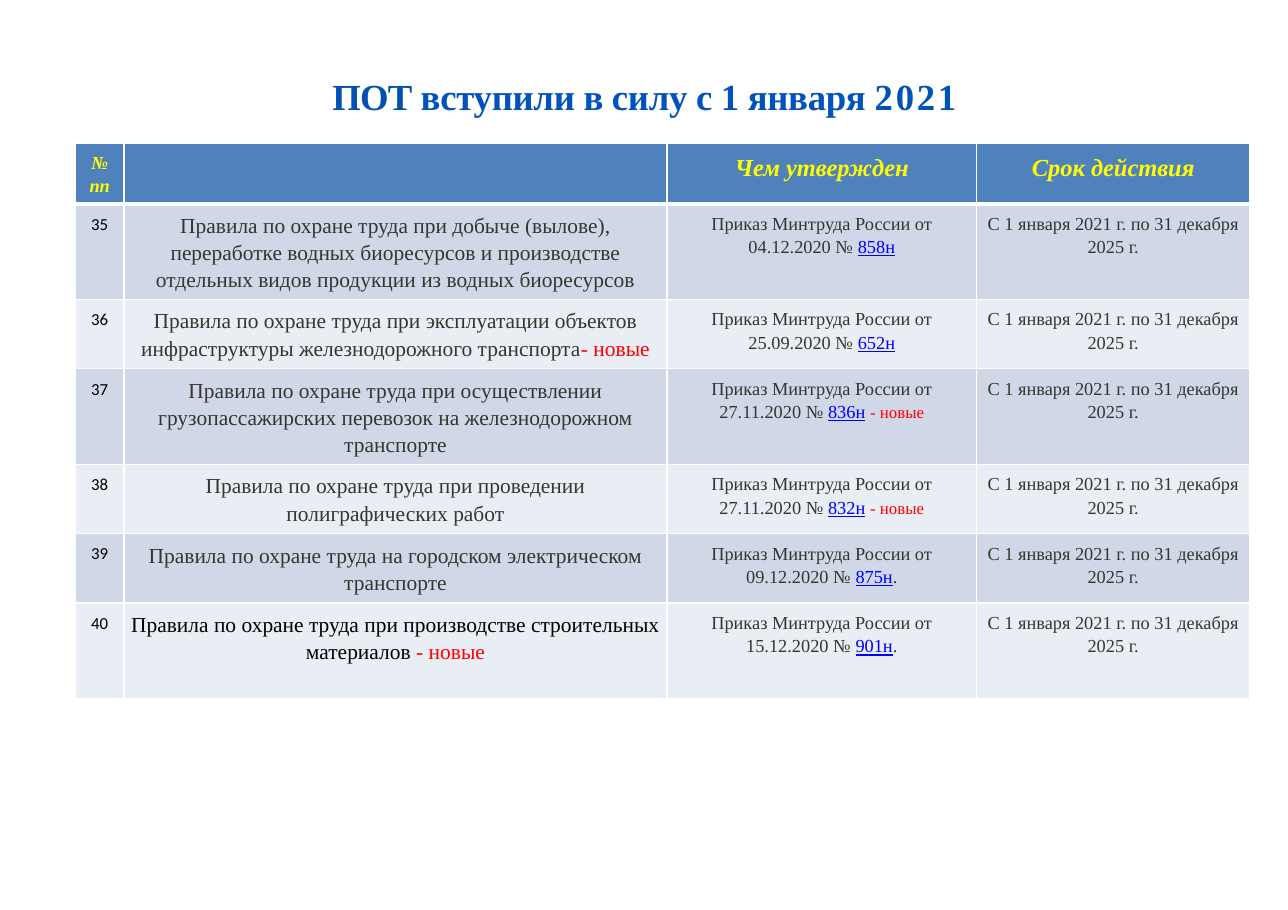
from dataclasses import dataclass

from lxml import etree
from pptx import Presentation
from pptx.dml.color import RGBColor
from pptx.enum import text
from pptx.oxml import ns
from pptx.util import Cm, Pt


@dataclass(frozen=True)
class Theme:
    serif: str = "Times New Roman"
    sans: str = "Calibri"
    title: tuple = ("0350B5", "0052BD", "0054B6")
    header: str = "4F81BD"
    header_text: str = "FFFF00"
    bands: tuple = ("D0D8E8", "E9EDF4")
    border: str = "FFFFFF"
    ink: str = "363530"
    black: str = "000000"
    link: str = "0000FF"
    new: str = "FF0000"
    title_size: int = 24
    head_size: int = 16
    rule_size: int = 14
    body_size: int = 12
    small_size: int = 11


T = Theme()
NEW = "- новые"
TERM = "С 1 января 2021 г. по 31 декабря 2025 г."
HEADINGS = [("№ пп", T.body_size), ("", T.head_size),
            ("Чем утвержден", T.head_size), ("Срок действия", T.head_size)]
COLUMNS = [1.12, 12.52, 7.14, 6.3]
HEADER_HEIGHT = 1.35

# Rule, its mark, order date, order number, text after it, mark of the order, row height
RULES = [
    ("Правила по охране труда при добыче (вылове), переработке водных биоресурсов "
     "и производстве отдельных видов продукции из водных биоресурсов",
     "", "04.12.2020", "858н", "", "", 2.16),
    ("Правила по охране труда при эксплуатации объектов инфраструктуры "
     "железнодорожного транспорта", NEW, "25.09.2020", "652н", "", "", 1.6),
    ("Правила по охране труда при осуществлении грузопассажирских перевозок "
     "на железнодорожном транспорте", "", "27.11.2020", "836н", " ", NEW, 2.16),
    ("Правила по охране труда при проведении полиграфических работ",
     "", "27.11.2020", "832н", " ", NEW, 1.6),
    ("Правила по охране труда на городском электрическом транспорте",
     "", "09.12.2020", "875н", ".", "", 1.6),
    ("Правила по охране труда при производстве строительных материалов ",
     NEW, "15.12.2020", "901н", ".", "", 2.2),
]
FIRST_NUMBER = 35


def add_run(p, words, size=T.body_size, color=T.ink, font=T.serif,
            bold=False, italic=False, underline=False, spacing=None):
    """Add one formatted run; spacing is in points."""
    if not words:
        return
    r = p.add_run()
    r.text = words
    f = r.font
    f.name, f.size, f.bold, f.italic, f.underline = font, Pt(size), bold, italic, underline
    f.color.rgb = RGBColor.from_string(color)
    if spacing is not None:
        r._r.get_or_add_rPr().set("spc", str(round(spacing * 100)))


def add_border(cell, side, width):
    ln = etree.SubElement(cell._tc.get_or_add_tcPr(), ns.qn(f"a:ln{side}"),
                          w=str(int(Pt(width))))
    fill = etree.SubElement(ln, ns.qn("a:solidFill"))
    etree.SubElement(fill, ns.qn("a:srgbClr"), val=T.border)


def prepare_cell(cell, fill, top=1, bottom=1):
    """Set borders, fill and margins; return the centred paragraph."""
    for side, width in zip("LRTB", (1, 1, top, bottom)):
        add_border(cell, side, width)
    cell.fill.solid()
    cell.fill.fore_color.rgb = RGBColor.from_string(fill)
    cell.margin_left = cell.margin_right = Cm(0.16)
    cell.margin_top = cell.margin_bottom = Cm(0.16)
    p = cell.text_frame.paragraphs[0]
    p.alignment = text.PP_ALIGN.CENTER
    p.line_spacing = 1.15
    return p


def add_title(s, x, y, w, h):
    sp = s.shapes.title
    sp.left, sp.top, sp.width, sp.height = Cm(x), Cm(y), Cm(w), Cm(h)
    tf = sp.text_frame
    tf.word_wrap = True
    tf.auto_size = text.MSO_AUTO_SIZE.NONE
    tf.vertical_anchor = text.MSO_ANCHOR.TOP
    tf.margin_left = tf.margin_right = tf.margin_bottom = 0
    tf.margin_top = Cm(0.1)
    p = tf.paragraphs[0]
    p.alignment = text.PP_ALIGN.CENTER
    parts = [("ПОТ ", -0.6), ("вступили в силу с 1 января ", -0.2), ("2021", 1.8)]
    for (words, spacing), color in zip(parts, T.title):
        add_run(p, words, size=T.title_size, color=color, bold=True, spacing=spacing)


def add_rules_table(s, x, y):
    heights = [HEADER_HEIGHT] + [rule[-1] for rule in RULES]
    table = s.shapes.add_table(len(heights), len(COLUMNS), Cm(x), Cm(y),
                               Cm(sum(COLUMNS)), Cm(sum(heights))).table
    for column, width in zip(table.columns, COLUMNS):
        column.width = Cm(width)
    for row, height in zip(table.rows, heights):
        row.height = Cm(height)

    # Header row
    for col, (words, size) in enumerate(HEADINGS):
        p = prepare_cell(table.cell(0, col), T.header, bottom=3)
        add_run(p, words, size=size, color=T.header_text, bold=True, italic=True)

    # One row per rule
    for i, (rule, mark, date, order, tail, order_mark, _) in enumerate(RULES):
        number, name, approval, term = [
            prepare_cell(table.cell(i + 1, col), T.bands[i % 2], top=1 if i else 3)
            for col in range(len(COLUMNS))]
        add_run(number, str(FIRST_NUMBER + i), size=T.small_size, color=T.black, font=T.sans)
        last = i == len(RULES) - 1
        add_run(name, rule, size=T.rule_size, color=T.black if last else T.ink)
        add_run(name, mark, size=T.rule_size, color=T.new)
        add_run(approval, f"Приказ Минтруда России от {date} № ")
        add_run(approval, order, color=T.link, underline=True)
        add_run(approval, tail)
        add_run(approval, order_mark, size=T.small_size, color=T.new)
        add_run(term, TERM)


def main():
    prs = Presentation()
    prs.slide_width, prs.slide_height = Cm(29.7), Cm(20.98)
    s = prs.slides.add_slide(prs.slide_layouts[5])
    add_title(s, 1.22, 1.6, 27.28, 2.06)
    add_rules_table(s, 1.74, 3.3)
    prs.save("out.pptx")


if __name__ == "__main__":
    main()
